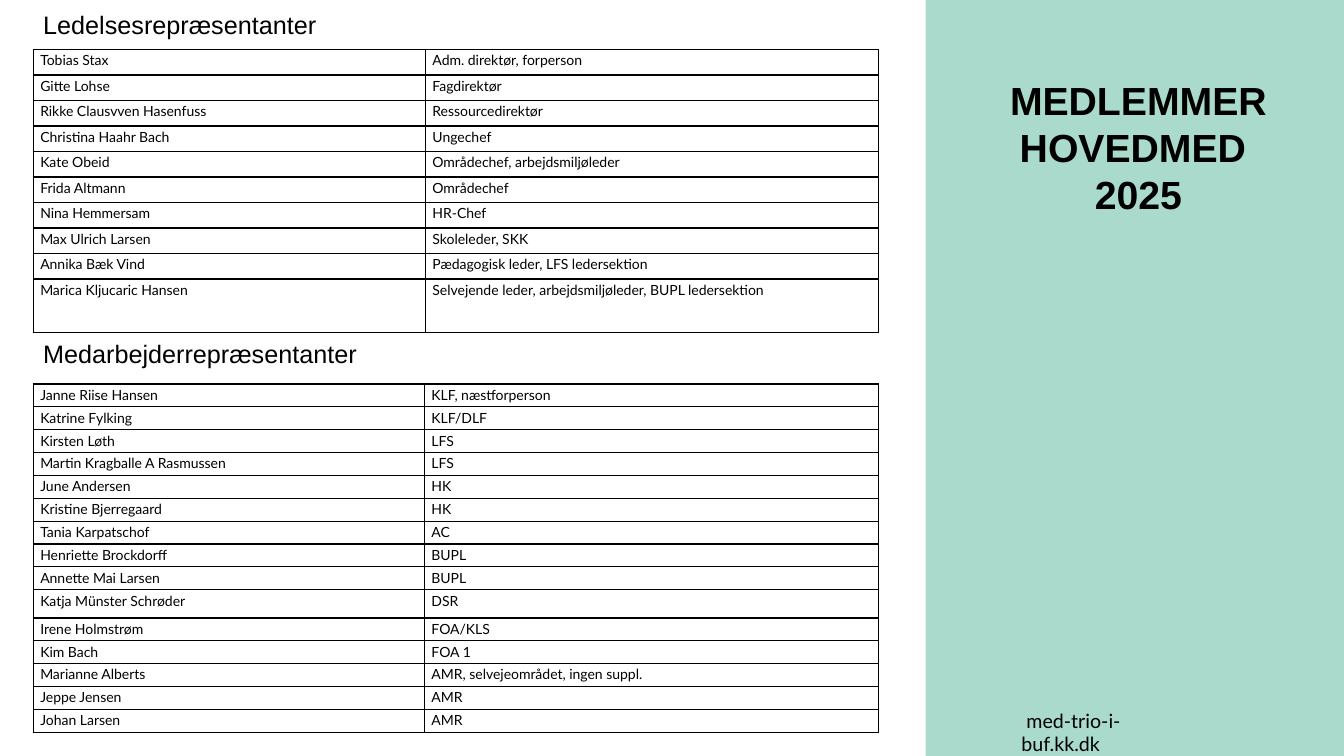
import pptx
import pptx.dml.color
import pptx.enum.shapes
import pptx.enum.text
import pptx.oxml
import pptx.oxml.ns
import pptx.util

Inches = pptx.util.Inches
Pt = pptx.util.Pt
RGB = pptx.dml.color.RGBColor.from_string
MSO_ANCHOR = pptx.enum.text.MSO_ANCHOR
PP_ALIGN = pptx.enum.text.PP_ALIGN

THEME = {
    "text": "000000", "panel": "A9DACB",
    "head_font": "Arial", "body_font": "Lato",
    "title": 28, "heading": 18, "link": 14, "cell": 10, "border": 1,
}

tables = [
    {
        "heading": "Ledelsesrepræsentanter", "heading_box": (0.33, 0.04, 3.28, 0.4),
        "top": 0.49, "height": 2.81, "cols": (3.89, 4.49), "tall_row": 9, "tall": 0.53,
        "rows": [
            ("Tobias Stax", "Adm. direktør, forperson"),
            ("Gitte Lohse", "Fagdirektør"),
            ("Rikke Clausvven Hasenfuss", "Ressourcedirektør"),
            ("Christina Haahr Bach", "Ungechef"),
            ("Kate Obeid", "Områdechef, arbejdsmiljøleder"),
            ("Frida Altmann", "Områdechef"),
            ("Nina Hemmersam", "HR-Chef"),
            ("Max Ulrich Larsen", "Skoleleder, SKK"),
            ("Annika Bæk Vind", "Pædagogisk leder, LFS ledersektion"),
            ("Marica Kljucaric Hansen", "Selvejende leder, arbejdsmiljøleder, BUPL ledersektion"),
        ],
    },
    {
        "heading": "Medarbejderrepræsentanter", "heading_box": (0.33, 3.31, 5.46, 0.4),
        "top": 3.81, "height": 3.46, "cols": (3.88, 4.5), "tall_row": 9, "tall": 0.28,
        "rows": [
            ("Janne Riise Hansen", "KLF, næstforperson"),
            ("Katrine Fylking", "KLF/DLF"),
            ("Kirsten Løth", "LFS"),
            ("Martin Kragballe A Rasmussen", "LFS"),
            ("June Andersen", "HK"),
            ("Kristine Bjerregaard", "HK"),
            ("Tania Karpatschof", "AC"),
            ("Henriette Brockdorff", "BUPL"),
            ("Annette Mai Larsen", "BUPL"),
            ("Katja Münster Schrøder", "DSR"),
            ("Irene Holmstrøm", "FOA/KLS"),
            ("Kim Bach", "FOA 1"),
            ("Marianne Alberts", "AMR, selvejeområdet, ingen suppl."),
            ("Jeppe Jensen", "AMR"),
            ("Johan Larsen", "AMR"),
        ],
    },
]


def style(p, size, font, bold=False):
    p.font.size = Pt(THEME[size])
    p.font.name = THEME[font]
    p.font.bold = bold
    p.font.color.rgb = RGB(THEME["text"])


def add_borders(cell):
    tc_pr = cell._tc.get_or_add_tcPr()
    for i, side in enumerate(("lnL", "lnR", "lnT", "lnB")):
        tc_pr.insert(i, pptx.oxml.parse_xml(
            f'<a:{side} {pptx.oxml.ns.nsdecls("a")} w="{Pt(THEME["border"])}">'
            f'<a:solidFill><a:srgbClr val="{THEME["text"]}"/></a:solidFill></a:{side}>'))


prs = pptx.Presentation()
prs.slide_width = Inches(13.33)
prs.slide_height = Inches(7.5)
slide = prs.slides.add_slide(prs.slide_layouts[5])

panel = slide.shapes.add_shape(
    pptx.enum.shapes.MSO_SHAPE.RECTANGLE, Inches(9.18), 0, Inches(4.15), Inches(7.5))
panel.shadow.inherit = False
panel.fill.solid()
panel.fill.fore_color.rgb = RGB(THEME["panel"])
panel.line.fill.background()

title = slide.shapes.title
title.element.addprevious(panel.element)
title.left, title.top, title.width, title.height = map(Inches, (9.4, 0.71, 3.78, 1.51))
tf = title.text_frame
tf.text = "MEDLEMMER HOVEDMED \n2025"
tf.word_wrap = True
tf.auto_size = pptx.enum.text.MSO_AUTO_SIZE.NONE
tf.vertical_anchor = MSO_ANCHOR.TOP
for p in tf.paragraphs:
    p.alignment = PP_ALIGN.CENTER
    style(p, "title", "head_font", bold=True)

link = slide.shapes.add_textbox(*map(Inches, (10.13, 7.03, 1.39, 0.24)))
tf = link.text_frame
tf.word_wrap = True
tf.margin_left = tf.margin_right = tf.margin_top = tf.margin_bottom = 0
tf.text = " med-trio-i-buf.kk.dk"
style(tf.paragraphs[0], "link", "body_font")

for group in tables:
    heading = slide.shapes.add_textbox(*map(Inches, group["heading_box"]))
    tf = heading.text_frame
    tf.word_wrap = True
    tf.text = group["heading"]
    style(tf.paragraphs[0], "heading", "head_font")

    rows = group["rows"]
    table = slide.shapes.add_table(
        len(rows), 2, Inches(0.33), Inches(group["top"]),
        Inches(8.39), Inches(group["height"])).table
    table.first_row = False
    table.horz_banding = False
    for column, width in zip(table.columns, group["cols"]):
        column.width = Inches(width)
    row_height = (group["height"] - group["tall"]) / (len(rows) - 1)
    for i, texts in enumerate(rows):
        table.rows[i].height = Inches(group["tall"] if i == group["tall_row"] else row_height)
        for cell, text in zip(table.rows[i].cells, texts):
            cell.margin_left = cell.margin_right = Inches(0.07)
            cell.margin_top = cell.margin_bottom = 0
            cell.vertical_anchor = MSO_ANCHOR.TOP
            cell.fill.background()
            add_borders(cell)
            cell.text = text
            p = cell.text_frame.paragraphs[0]
            p.line_spacing = 1.15
            p.space_after = Pt(10)
            style(p, "cell", "body_font")

prs.save("out.pptx")
